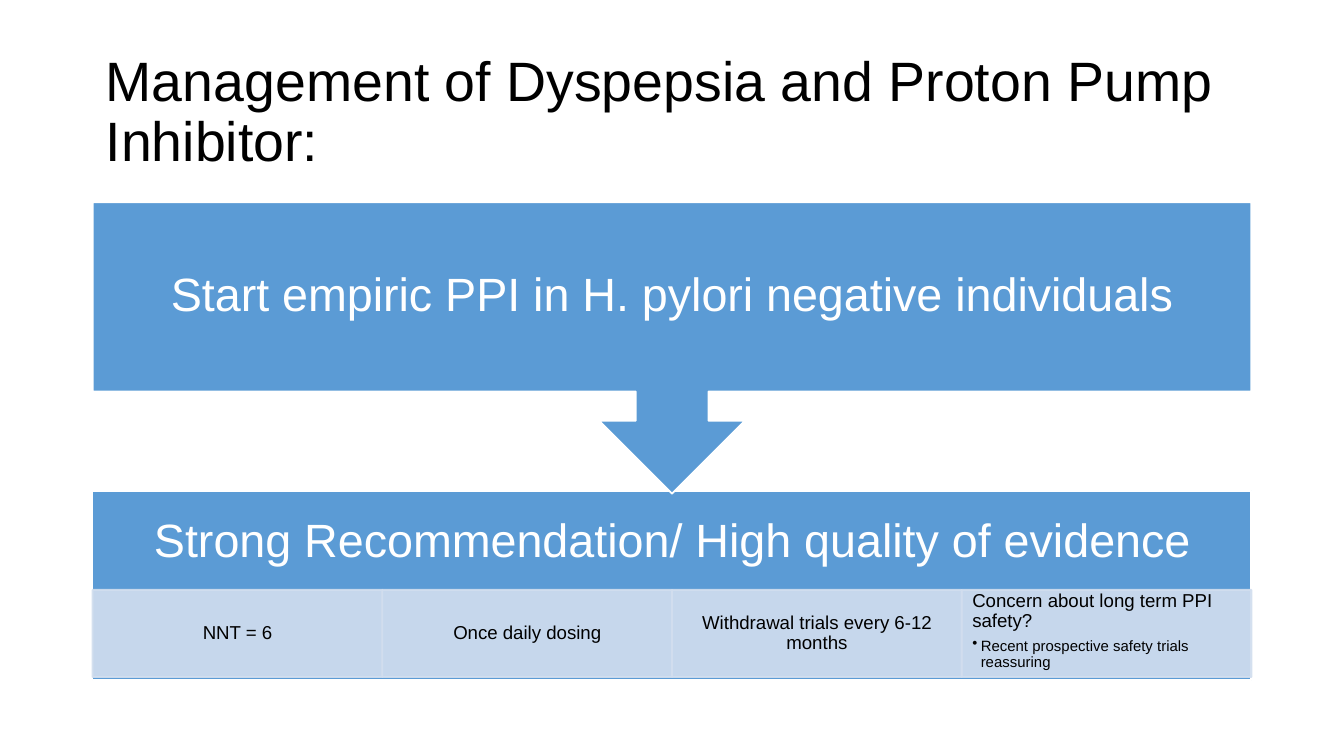
import pptx
import pptx.util
import pptx.dml.color
import pptx.enum.shapes
import pptx.enum.text
from lxml import etree

Cm, Pt = pptx.util.Cm, pptx.util.Pt
SHAPE = pptx.enum.shapes.MSO_SHAPE
ALIGN = pptx.enum.text.PP_ALIGN
ANCHOR = pptx.enum.text.MSO_ANCHOR

# Content: a paragraph is (text, size, bulleted)
TITLE = "Management of Dyspepsia and Proton Pump Inhibitor:"
STEP = "Start empiric PPI in H. pylori negative individuals"
RATING = "Strong Recommendation/ High quality of evidence"
DETAILS = [
    [("NNT = 6", 10, False)],
    [("Once daily dosing", 10, False)],
    [("Withdrawal trials every 6-12 months", 10, False)],
    [("Concern about long term PPI safety?", 10, False),
     ("Recent prospective safety trials reassuring", 8, True)],
]
BLACK, WHITE, BLUE, PALE = "000000", "FFFFFF", "5B9BD5", "D2DEEF"

# Layout in centimetres
SLIDE_W, SLIDE_H = 25.4, 14.29
LEFT = 1.75
WIDTH = SLIDE_W - 2 * LEFT
STEP_TOP, STEP_H, CALLOUT_H = 3.82, 3.58, 5.51
RATING_TOP, RATING_H, RATING_TEXT_H = 9.28, 3.58, 1.93
DETAIL_TOP, DETAIL_H = 11.15, 1.65
DETAIL_W = WIDTH / len(DETAILS)


def rgb(color):
    return pptx.dml.color.RGBColor.from_string(color)


def set_alpha(fill, percent):
    for clr in fill.iter(pptx.oxml.ns.qn("a:srgbClr")):
        etree.SubElement(clr, pptx.oxml.ns.qn("a:alpha"), val=str(percent * 1000))


def add_box(kind, x, y, w, h, fill, line):
    sp = s.shapes.add_shape(kind, Cm(x), Cm(y), Cm(w), Cm(h))
    sp.shadow.inherit = False
    sp.fill.solid()
    sp.fill.fore_color.rgb = rgb(fill)
    sp.line.color.rgb = rgb(line)
    sp.line.width = Pt(1)
    return sp


def add_bullet(p):
    pPr = p._p.get_or_add_pPr()
    indent = Cm(0.16)
    pPr.set("marL", str(indent))
    pPr.set("indent", str(-indent))
    etree.SubElement(pPr, pptx.oxml.ns.qn("a:buChar"), char="•")


def write(sp, paragraphs, color, align, inset, anchor=ANCHOR.MIDDLE, after=0.35):
    tf = sp.text_frame
    tf.word_wrap = True
    tf.vertical_anchor = anchor
    tf.margin_left = tf.margin_right = Cm(inset[0])
    tf.margin_top = tf.margin_bottom = Cm(inset[1])
    for i, (text, size, bulleted) in enumerate(paragraphs):
        p = tf.add_paragraph() if i else tf.paragraphs[0]
        p.alignment = align
        p.line_spacing = 0.9
        p.space_after = Pt(size * (0.15 if bulleted else after))
        if bulleted:
            p.level = 1
            add_bullet(p)
        r = p.add_run()
        r.text = text
        r.font.name = "Arial"
        r.font.size = Pt(size)
        r.font.color.rgb = rgb(color)


def add_text(x, y, w, h, *args, **kwargs):
    sp = s.shapes.add_textbox(Cm(x), Cm(y), Cm(w), Cm(h))
    write(sp, *args, **kwargs)


prs = pptx.Presentation()
prs.slide_width, prs.slide_height = Cm(SLIDE_W), Cm(SLIDE_H)
s = prs.slides.add_slide(prs.slide_layouts[6])

# Title
add_text(LEFT, 0.76, WIDTH, 2.77, [(TITLE, 29.7, False)], BLACK, ALIGN.LEFT,
         (0.25, 0.13), after=0)

# Recommendation rating
add_box(SHAPE.RECTANGLE, LEFT, RATING_TOP, WIDTH, RATING_H, BLUE, WHITE)
add_text(LEFT, RATING_TOP, WIDTH, RATING_TEXT_H, [(RATING, 25, False)], WHITE,
         ALIGN.CENTER, (0.48, 0.48))

# Row of details
for i, paragraphs in enumerate(DETAILS):
    sp = add_box(SHAPE.RECTANGLE, LEFT + i * DETAIL_W, DETAIL_TOP, DETAIL_W, DETAIL_H,
                 PALE, PALE)
    set_alpha(sp._element.spPr, 90)
    is_list = len(paragraphs) > 1
    write(sp, paragraphs, BLACK, ALIGN.LEFT if is_list else ALIGN.CENTER, (0.2, 0.03),
          ANCHOR.TOP if is_list else ANCHOR.MIDDLE)

# First step, with its arrow turned to point down
sp = add_box(SHAPE.UP_ARROW_CALLOUT, LEFT, STEP_TOP, WIDTH, CALLOUT_H, BLUE, WHITE)
sp.rotation = 180
sp.adjustments[3] = STEP_H / CALLOUT_H
add_text(LEFT, STEP_TOP, WIDTH, STEP_H, [(STEP, 25, False)], WHITE, ALIGN.CENTER,
         (0.48, 0.48))

prs.save("out.pptx")
